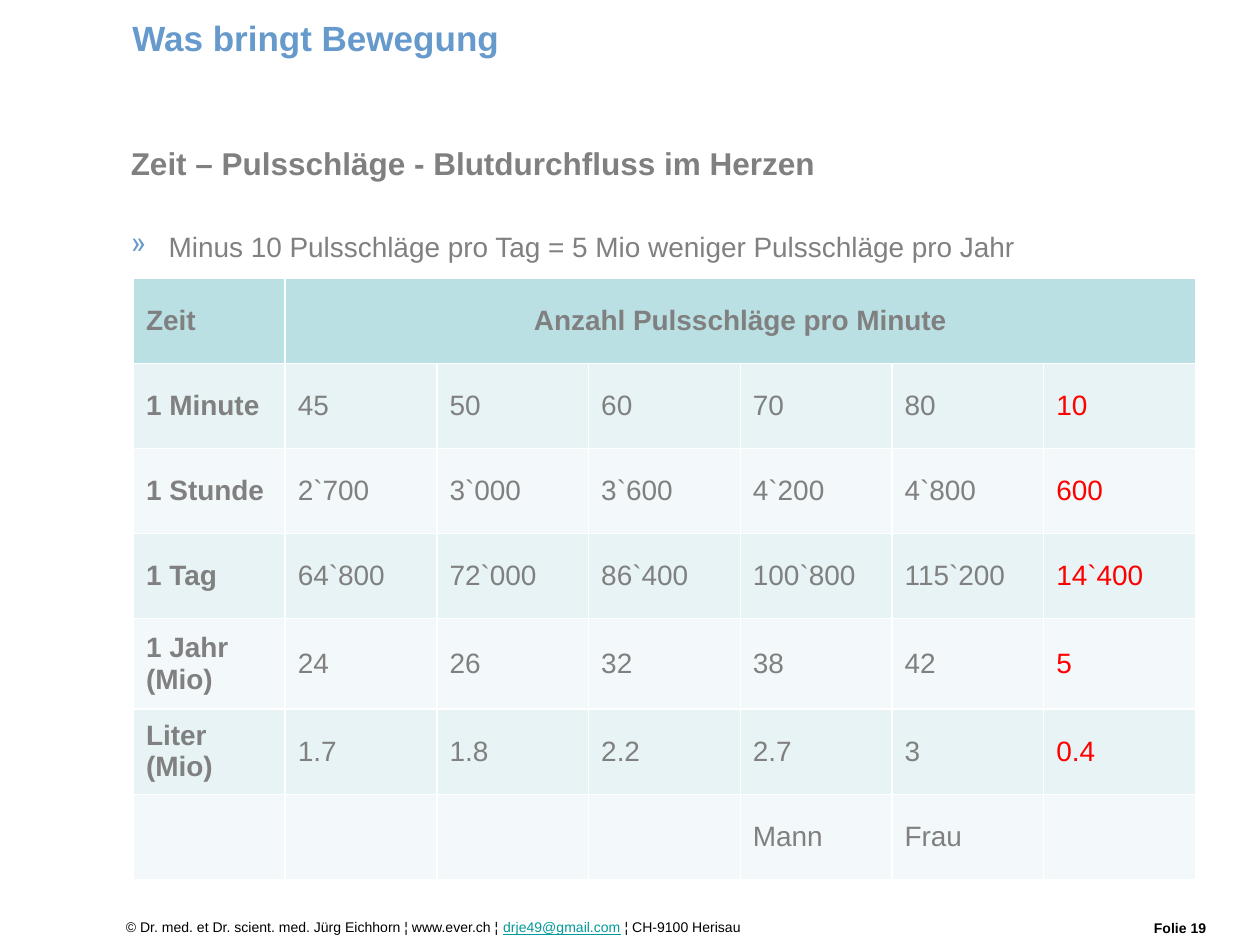
from dataclasses import dataclass

from lxml.etree import SubElement
from pptx import Presentation
from pptx.dml.color import RGBColor
from pptx.enum.text import MSO_ANCHOR, PP_ALIGN
from pptx.oxml.ns import qn
from pptx.util import Inches, Pt


@dataclass(frozen=True)
class Theme:
    font: str = "Arial"
    accent: str = "6699CC"
    text: str = "808080"
    footer: str = "000000"
    address: str = "009999"
    highlight: str = "FF0000"
    header_fill: str = "BBE0E3"
    odd_fill: str = "E7F3F4"
    even_fill: str = "F3F9FA"
    title_size: int = 20
    heading_size: int = 18
    body_size: int = 16
    footer_size: int = 8


THEME = Theme()

PULSE_ROWS = [
    ["Zeit", "Anzahl Pulsschläge pro Minute", "", "", "", "", ""],
    ["1 Minute", "45", "50", "60", "70", "80", "10"],
    ["1 Stunde", "2`700", "3`000", "3`600", "4`200", "4`800", "600"],
    ["1 Tag", "64`800", "72`000", "86`400", "100`800", "115`200", "14`400"],
    ["1 Jahr (Mio)", "24", "26", "32", "38", "42", "5"],
    ["Liter (Mio)", "1.7", "1.8", "2.2", "2.7", "3", "0.4"],
    ["", "", "", "", "Mann", "Frau", ""],
]
YEAR_ROW = 4


def style(font, size, color, bold=False):
    font.name = THEME.font
    font.size = Pt(size)
    font.bold = bold
    font.color.rgb = RGBColor.from_string(color)


def add_text_box(slide, left, top, width, height):
    frame = slide.shapes.add_textbox(
        Inches(left), Inches(top), Inches(width), Inches(height)
    ).text_frame
    frame.word_wrap = True
    return frame


def add_bullet(paragraph, symbol, color, indent):
    properties = paragraph._p.get_or_add_pPr()
    properties.set("marL", str(indent))
    properties.set("indent", str(-indent))
    bullet_color = SubElement(properties, qn("a:buClr"))
    SubElement(bullet_color, qn("a:srgbClr")).set("val", color)
    SubElement(properties, qn("a:buChar")).set("char", symbol)


def set_title(slide, text):
    title = slide.shapes.title
    title.left, title.top = Inches(0.95), Inches(0.05)
    title.width, title.height = Inches(6.42), Inches(0.5)
    frame = title.text_frame
    frame.text = text
    frame.vertical_anchor = MSO_ANCHOR.MIDDLE
    heading = frame.paragraphs[0]
    heading.alignment = PP_ALIGN.LEFT
    style(heading.font, THEME.title_size, THEME.accent, bold=True)


def add_body(slide):
    frame = add_text_box(slide, 0.94, 1.09, 8.6, 1.1)
    heading = frame.paragraphs[0]
    heading.text = "Zeit – Pulsschläge - Blutdurchfluss im Herzen"
    heading.space_after = Pt(27.5)
    style(heading.font, THEME.heading_size, THEME.text, bold=True)

    statement = frame.add_paragraph()
    statement.text = "Minus 10 Pulsschläge pro Tag = 5 Mio weniger Pulsschläge pro Jahr"
    add_bullet(statement, "»", THEME.accent, Inches(0.3))
    style(statement.font, THEME.body_size, THEME.text)


def fill_cell(cell, text, row, column, last_column):
    if row == 0:
        fill = THEME.header_fill
    else:
        fill = THEME.odd_fill if row % 2 else THEME.even_fill
    cell.fill.solid()
    cell.fill.fore_color.rgb = RGBColor.from_string(fill)
    cell.vertical_anchor = MSO_ANCHOR.MIDDLE
    cell.text = text
    color = THEME.highlight if row and column == last_column else THEME.text
    style(cell.text_frame.paragraphs[0].font, THEME.body_size, color,
          bold=row == 0 or column == 0)


def add_pulse_table(slide):
    row_count, column_count = len(PULSE_ROWS), len(PULSE_ROWS[0])
    table = slide.shapes.add_table(
        row_count, column_count,
        Inches(1.06), Inches(2.21), Inches(8.43), Inches(4.77),
    ).table
    for column in table.columns:
        column.width = Inches(8.43) // column_count
    for row in table.rows:
        row.height = Inches(4.05) // (row_count - 1)
    table.rows[YEAR_ROW].height = Inches(0.72)

    for row, values in enumerate(PULSE_ROWS):
        for column, value in enumerate(values):
            fill_cell(table.cell(row, column), value, row, column, column_count - 1)
    pulse_header = table.cell(0, 1)
    pulse_header.merge(table.cell(0, column_count - 1))
    pulse_header.text_frame.paragraphs[0].alignment = PP_ALIGN.CENTER


def add_footer(slide):
    page = add_text_box(slide, 9.06, 7.25, 0.94, 0.23).paragraphs[0]
    page.text = "Folie 19"
    style(page.font, THEME.footer_size, THEME.footer, bold=True)

    credit = add_text_box(slide, 0.9, 7.24, 8.11, 0.23).paragraphs[0]
    style(credit.font, THEME.footer_size, THEME.footer)
    for text, color in [
        ("© Dr. med. et Dr. scient. med. Jürg Eichhorn ¦ www.ever.ch ¦ ", THEME.footer),
        ("drje49@gmail.com", THEME.address),
        (" ¦ CH-9100 Herisau", THEME.footer),
    ]:
        run = credit.add_run()
        run.text = text
        style(run.font, THEME.footer_size, color)
        run.font.underline = color == THEME.address


def main():
    presentation = Presentation()
    presentation.slide_width = Inches(10)
    presentation.slide_height = Inches(7.5)
    slide = presentation.slides.add_slide(presentation.slide_layouts[5])
    add_footer(slide)
    set_title(slide, "Was bringt Bewegung")
    add_body(slide)
    add_pulse_table(slide)
    presentation.save("out.pptx")


if __name__ == "__main__":
    main()
